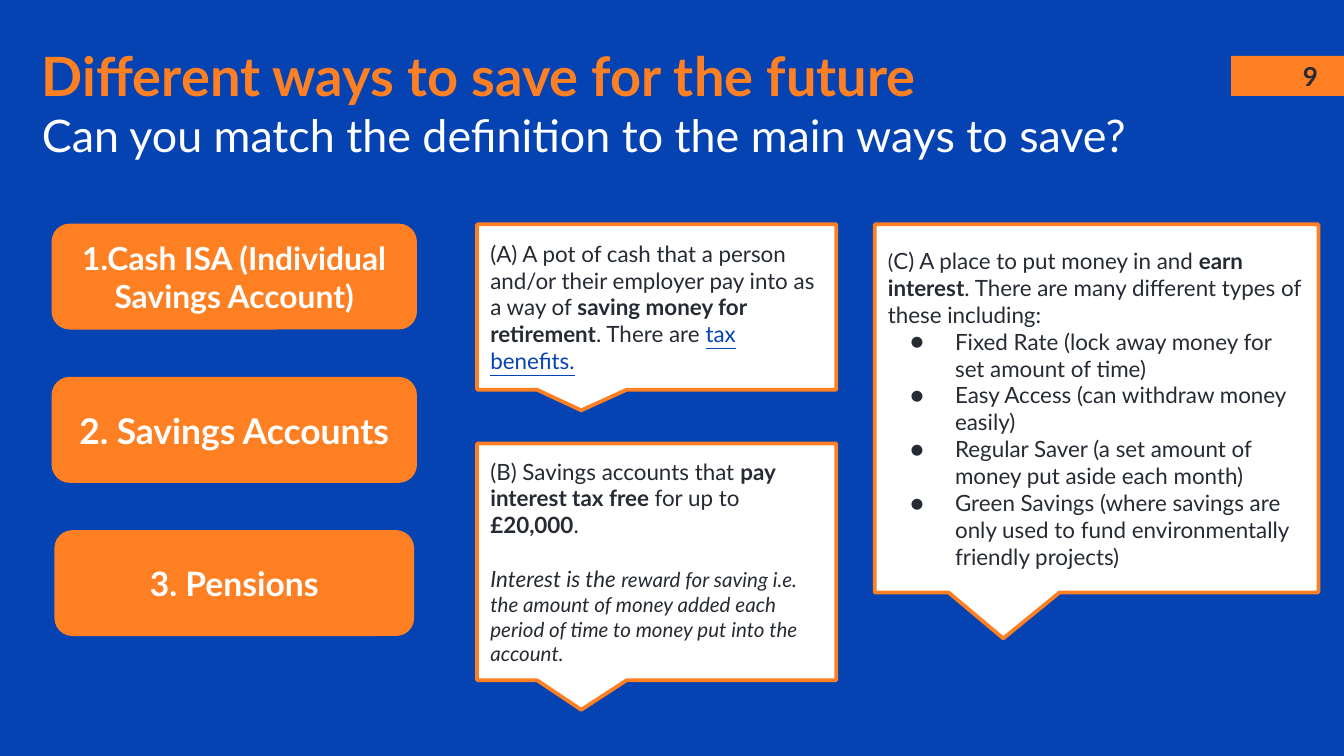
from dataclasses import dataclass

from lxml.etree import SubElement
from pptx import Presentation
from pptx.dml.color import RGBColor
from pptx.enum.shapes import MSO_SHAPE as Shape
from pptx.enum.text import MSO_ANCHOR as Anchor, PP_ALIGN as Align
from pptx.oxml.ns import qn
from pptx.util import Pt


@dataclass(frozen=True)
class Theme:
    """Colours, font and type sizes in points."""
    blue: str = "0543B3"
    orange: str = "FF8022"
    white: str = "FFFFFF"
    ink: str = "262A33"
    font: str = "Lato"
    title: float = 29
    subtitle: float = 24
    number: float = 14
    body: float = 12
    small: float = 11
    way_sizes: tuple = (17, 19, 18)


@dataclass(frozen=True)
class Box:
    """A rectangle in points."""
    left: float
    top: float
    width: float
    height: float

    def inner(self, left, top, width, height):
        """Return a box placed relative to this one."""
        return Box(self.left + left, self.top + top, width, height)

    def lengths(self):
        """Return the four lengths for python-pptx."""
        return [Pt(value) for value in (self.left, self.top, self.width, self.height)]


THEME = Theme()


def add_span(para, text, size, color=THEME.ink, bold=False, italic=False, underline=False):
    """Append one styled run to a paragraph."""
    span = para.add_run()
    span.text = text
    font = span.font
    font.name, font.size = THEME.font, Pt(size)
    font.bold, font.italic, font.underline = bold, italic, underline
    font.color.rgb = RGBColor.from_string(color)


def set_frame(shape, anchor, across=0, down=0):
    """Set wrapping, anchor and insets, and return the text frame."""
    frame = shape.text_frame
    frame.word_wrap = True
    frame.vertical_anchor = anchor
    frame.margin_left = frame.margin_right = Pt(across)
    frame.margin_top = frame.margin_bottom = Pt(down)
    return frame


def add_panel(page, kind, box, fill, line=None, weight=0.75):
    """Draw a filled preset shape with an optional outline."""
    shape = page.shapes.add_shape(kind, *box.lengths())
    shape.shadow.inherit = False
    shape.fill.solid()
    shape.fill.fore_color.rgb = RGBColor.from_string(fill)
    if line:
        shape.line.color.rgb = RGBColor.from_string(line)
        shape.line.width = Pt(weight)
    else:
        shape.line.fill.background()
    return shape


def add_bullet(para):
    """Give a paragraph a round bullet and a hanging indent."""
    props = para._p.get_or_add_pPr()
    props.set("marL", str(Pt(36)))
    props.set("indent", str(Pt(-24)))
    color = SubElement(props, qn("a:buClr"))
    SubElement(color, qn("a:srgbClr"), val=THEME.ink)
    SubElement(props, qn("a:buFont"), typeface=THEME.font)
    SubElement(props, qn("a:buChar"), char="●")


def add_heading(page, box):
    """Place the title and the question below it."""
    frame = set_frame(page.shapes.add_textbox(*box.lengths()), Anchor.TOP)
    add_span(frame.paragraphs[0], "Different ways to save for the future",
             THEME.title, THEME.orange, bold=True)
    add_span(frame.add_paragraph(), "Can you match the definition to the main ways to save?",
             THEME.subtitle, THEME.white)


def add_page_number(page, box):
    """Place the page number tab."""
    add_panel(page, Shape.RECTANGLE, box, THEME.orange)
    label = box.inner(box.width - 36, 1.5, 36, 18)
    frame = set_frame(page.shapes.add_textbox(*label.lengths()), Anchor.MIDDLE, 7.2)
    para = frame.paragraphs[0]
    para.alignment = Align.CENTER
    add_span(para, "9", THEME.number, bold=True)


def add_ways(page, box):
    """Stack the numbered ways to save at equal steps."""
    ways = [
        ("1.Cash ISA (Individual Savings Account)", 195),
        ("2. Savings Accounts", 195),
        ("3. Pensions", 192),
    ]
    height = 56
    step = (box.height - height) / (len(ways) - 1)
    for index, ((text, width), size) in enumerate(zip(ways, THEME.way_sizes)):
        place = box.inner((box.width - width) / 2, index * step, width, height)
        card = add_panel(page, Shape.ROUNDED_RECTANGLE, place, THEME.orange, THEME.orange)
        para = set_frame(card, Anchor.MIDDLE, 7.2, 7.2).paragraphs[0]
        para.alignment = Align.CENTER
        add_span(para, text, size, THEME.white, bold=True)


def add_callout(page, box):
    """Draw a definition callout and return its text frame."""
    callout = add_panel(page, Shape.ROUNDED_RECTANGULAR_CALLOUT, box,
                        THEME.white, THEME.orange, 2)
    for index, value in enumerate((-0.21, 0.625, 0)):
        callout.adjustments[index] = round(value, 3)
    frame = set_frame(callout, Anchor.MIDDLE, 7.2, 3.6)
    frame.paragraphs[0].alignment = Align.LEFT
    return frame


def add_pension(page, box):
    """Place definition A."""
    para = add_callout(page, box).paragraphs[0]
    add_span(para, "(A) A pot of cash that a person and/or their employer pay into as a way of ",
             THEME.body)
    add_span(para, "saving money for retirement", THEME.body, bold=True)
    add_span(para, ". There are ", THEME.body)
    add_span(para, "tax benefits.", THEME.body, THEME.blue, underline=True)


def add_tax_free(page, box):
    """Place definition B with its note on interest."""
    frame = add_callout(page, box)
    para = frame.paragraphs[0]
    add_span(para, "(B) Savings accounts that ", THEME.body)
    add_span(para, "pay interest tax free ", THEME.body, bold=True)
    add_span(para, "for up to ", THEME.body)
    add_span(para, "£20,000", THEME.body, bold=True)
    add_span(para, ".", THEME.body)
    note = frame.add_paragraph()
    note.alignment = Align.LEFT
    note.space_before = Pt(14.4)
    add_span(note, "Interest is the ", THEME.body, italic=True)
    add_span(note, "reward for saving i.e. the amount of money added each period of time "
             "to money put into the account.", THEME.small, italic=True)


def add_account_types(page, box):
    """Place definition C with its list of account types."""
    frame = add_callout(page, box)
    para = frame.paragraphs[0]
    add_span(para, "(", THEME.small)
    add_span(para, "C) A place to put money in and", THEME.body)
    add_span(para, " earn interest", THEME.body, bold=True)
    add_span(para, ". There are many different types of these including:", THEME.body)
    for text in (
        "Fixed Rate (lock away money for set amount of time)",
        "Easy Access (can withdraw money easily)",
        "Regular Saver (a set amount of money put aside each month)",
        "Green Savings (where savings are only used to fund environmentally friendly projects)",
    ):
        item = frame.add_paragraph()
        item.alignment = Align.LEFT
        add_bullet(item)
        add_span(item, text, THEME.body)


def main():
    """Build and save the slide."""
    deck = Presentation()
    deck.slide_width, deck.slide_height = Pt(720), Pt(405)
    page = deck.slides.add_slide(deck.slide_layouts[6])
    page.background.fill.solid()
    page.background.fill.fore_color.rgb = RGBColor.from_string(THEME.blue)
    add_page_number(page, Box(659.5, 30, 60.5, 21.5))
    add_heading(page, Box(22.5, 23, 612, 61))
    add_account_types(page, Box(468.6, 120.2, 237.7, 197.2))
    add_tax_free(page, Box(255.6, 237.6, 192.4, 126.8))
    add_pension(page, Box(255.6, 120.2, 192.4, 88.6))
    add_ways(page, Box(28, 120.2, 195, 220.2))
    deck.save("out.pptx")


if __name__ == "__main__":
    main()
